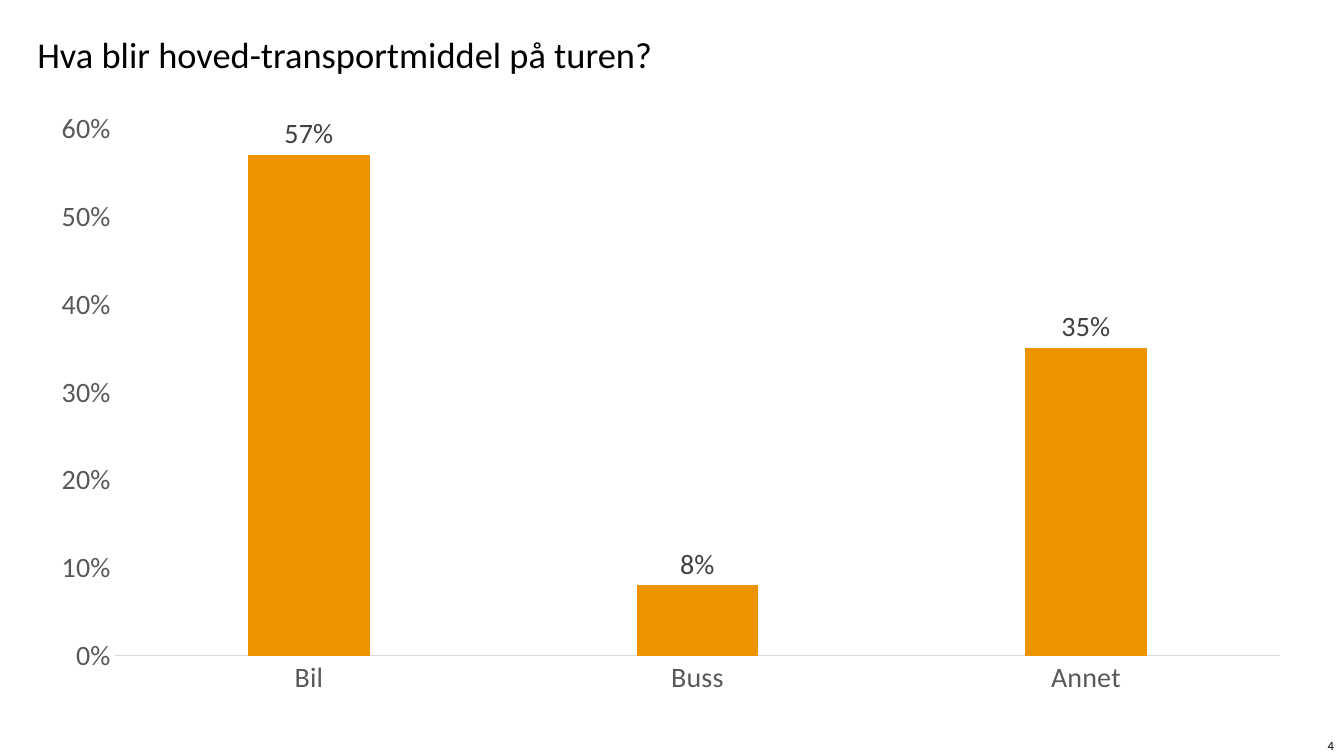
from pptx import Presentation
from pptx import util as u
from pptx.chart import data
from pptx.dml.color import RGBColor
from pptx.enum import chart as ch, text

BLACK = RGBColor(0x00, 0x00, 0x00)
GREY = RGBColor(0x59, 0x59, 0x59)
DARK = RGBColor(0x40, 0x40, 0x40)
PALE = RGBColor(0xD9, 0xD9, 0xD9)
ORANGE = RGBColor(0xED, 0x93, 0x00)


def style(item, **vals):
    """Set each given value as an attribute of the item."""
    for key, val in vals.items():
        setattr(item, key, val)


def style_font(font, size, color):
    """Set the typeface, size and colour of a font."""
    style(font, name="Calibri", size=u.Pt(size), bold=False)
    font.color.rgb = color


def add_text(slide, box, words, size, align, inset):
    """Place one line of text in the box."""
    frame = slide.shapes.add_textbox(*map(u.Inches, box)).text_frame
    style(frame, word_wrap=True, vertical_anchor=text.MSO_ANCHOR.MIDDLE,
          margin_left=u.Inches(inset), margin_right=u.Inches(inset),
          margin_top=0, margin_bottom=0)
    line = frame.paragraphs[0]
    style(line, text=words, alignment=align)
    style_font(line.runs[0].font, size, BLACK)


def add_bars(slide, box):
    """Place the column chart of transport shares in the box."""
    shares = data.CategoryChartData(number_format="0%")
    shares.categories = ["Bil", "Buss", "Annet"]
    shares.add_series("Series 1", [0.57, 0.08, 0.35])
    chart = slide.shapes.add_chart(
        ch.XL_CHART_TYPE.COLUMN_CLUSTERED, *map(u.Inches, box), shares).chart
    style(chart, has_legend=False, has_title=False)
    style_font(chart.font, 20, BLACK)

    for axis in (chart.category_axis, chart.value_axis):
        style(axis, has_major_gridlines=False,
              major_tick_mark=ch.XL_TICK_MARK.NONE,
              minor_tick_mark=ch.XL_TICK_MARK.NONE)
        style_font(axis.tick_labels.font, 20, GREY)
    base = chart.category_axis.format.line
    base.color.rgb = PALE
    base.width = u.Pt(0.75)
    scale = chart.value_axis
    style(scale, minimum_scale=0, maximum_scale=0.6, major_unit=0.1)
    style(scale.tick_labels, number_format="0%", number_format_is_linked=False)
    scale.format.line.fill.background()

    plot = chart.plots[0]
    style(plot, gap_width=219, overlap=-27, vary_by_categories=False,
          has_data_labels=True)
    style(plot.data_labels, show_value=True, number_format="0%",
          number_format_is_linked=False,
          position=ch.XL_LABEL_POSITION.OUTSIDE_END)
    style_font(plot.data_labels.font, 20, DARK)
    fill = plot.series[0].format.fill
    fill.solid()
    fill.fore_color.rgb = ORANGE


def main():
    """Build the slide and save it."""
    deck = Presentation()
    style(deck, slide_width=u.Inches(13.33), slide_height=u.Inches(7.5))
    slide = deck.slides.add_slide(deck.slide_layouts[6])
    add_text(slide, (0.37, 0.28, 11.58, 0.51),
             "Hva blir hoved-transportmiddel på turen?", 26,
             text.PP_ALIGN.LEFT, 0)
    add_bars(slide, (0.36, 0.98, 12.59, 6.03))
    add_text(slide, (12.95, 7.29, 0.38, 0.21), "4", 9,
             text.PP_ALIGN.RIGHT, 0.1)
    deck.save("out.pptx")


if __name__ == "__main__":
    main()
